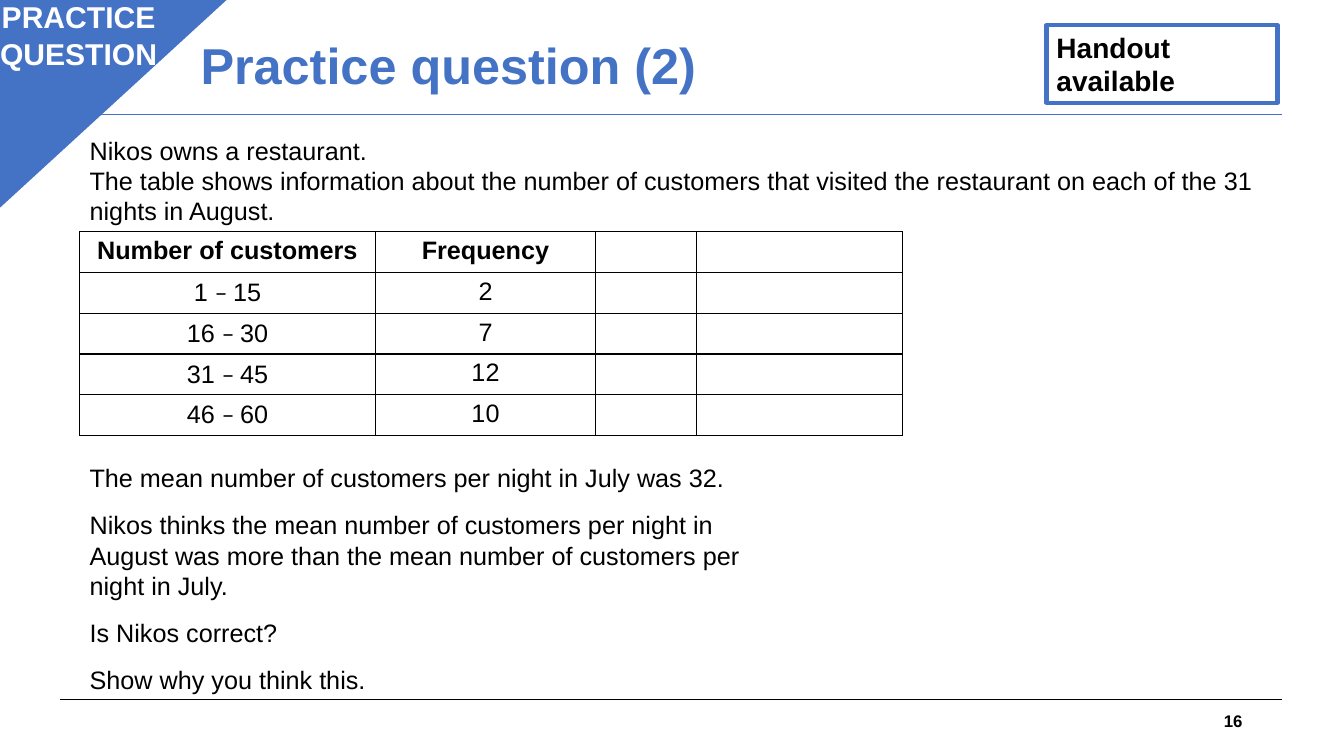
from dataclasses import dataclass

import lxml.etree
import pptx
import pptx.dml.color
import pptx.enum.shapes
import pptx.enum.text
import pptx.oxml.ns
import pptx.util
from pptx.enum.text import MSO_ANCHOR, PP_ALIGN

BLUE = pptx.dml.color.RGBColor(0x44, 0x72, 0xC4)
BLACK = pptx.dml.color.RGBColor(0, 0, 0)
WHITE = pptx.dml.color.RGBColor(0xFF, 0xFF, 0xFF)

WIDTH = pptx.util.Inches(13.33)
HEIGHT = pptx.util.Inches(7.5)
BODY_SIZE = 18


def across(percent: float) -> int:
    return round(WIDTH * percent / 100)


def down(percent: float) -> int:
    return round(HEIGHT * percent / 100)


@dataclass(frozen=True)
class Area:
    """Place on the slide, in percent of its width and height."""
    left: float
    top: float
    width: float
    height: float

    def emu(self) -> tuple[int, int, int, int]:
        return across(self.left), down(self.top), across(self.width), down(self.height)


@dataclass(frozen=True)
class Passage:
    area: Area
    paragraphs: tuple[str, ...]
    size: float = BODY_SIZE
    color: pptx.dml.color.RGBColor = BLACK
    bold: bool = False
    align: PP_ALIGN = PP_ALIGN.LEFT
    anchor: MSO_ANCHOR = MSO_ANCHOR.TOP
    space_before: float = 0
    line_spacing: float = 1.0


@dataclass(frozen=True)
class Rule:
    top: float
    color: pptx.dml.color.RGBColor


RULES = (Rule(92.53, BLACK), Rule(15.2, BLUE))
RULE_LEFT, RULE_RIGHT = 4.43, 95.42

CORNER = Area(-0.23, -0.27, 17.18, 28)
HANDOUT = Passage(Area(77.87, 3.33, 17.18, 10.27), ("Handout\vavailable",),
                  size=20, bold=True, anchor=MSO_ANCHOR.MIDDLE)

PASSAGES = (
    Passage(Area(14.18, 1.6, 64.59, 14.8), ("Practice question (2)",), size=36, color=BLUE,
            bold=True, anchor=MSO_ANCHOR.MIDDLE, line_spacing=0.9),
    Passage(Area(70.67, 92.67, 22.51, 5.33), ("16",), size=12, bold=True,
            align=PP_ALIGN.RIGHT, anchor=MSO_ANCHOR.MIDDLE),
    Passage(Area(-2.1, -0.8, 15.9, 11.2), ("PRACTICE QUESTION",), size=21.5, color=WHITE,
            bold=True, align=PP_ALIGN.CENTER),
    Passage(Area(5.93, 17.2, 91.45, 21.6), (
        "Nikos owns a restaurant.",
        "The table shows information about the number of customers that visited "
        "the restaurant on each of the 31 nights in August.",
    )),
    Passage(Area(5.93, 60.53, 50.56, 32.27), (
        "The mean number of customers per night in July was 32.",
        "Nikos thinks the mean number of customers per night in August was more "
        "than the mean number of customers per night in July.",
        "Is Nikos correct?",
        "Show why you think this.",
    ), space_before=12),
)

FREQUENCY_AREA = Area(5.93, 30.67, 61.22, 26.93)
FREQUENCY_COLUMNS = (21.98, 16.43, 7.5, 15.3)
HEADINGS = ("Number of customers", "Frequency")
FREQUENCIES = (2, 7, 12, 10)
CLASS_WIDTH = 15


def set_font(font, size: float, color: pptx.dml.color.RGBColor, bold: bool) -> None:
    font.name = "Arial"
    font.size = pptx.util.Pt(size)
    font.bold = bold
    font.color.rgb = color


def write_passage(frame, passage: Passage) -> None:
    frame.word_wrap = True
    frame.vertical_anchor = passage.anchor
    for index, text in enumerate(passage.paragraphs):
        paragraph = frame.add_paragraph() if index else frame.paragraphs[0]
        paragraph.text = text
        paragraph.alignment = passage.align
        paragraph.line_spacing = passage.line_spacing
        paragraph.space_before = pptx.util.Pt(passage.space_before if index else 0)
        set_font(paragraph.font, passage.size, passage.color, passage.bold)


def draw_rule(slide, rule: Rule) -> None:
    line = slide.shapes.add_connector(
        pptx.enum.shapes.MSO_CONNECTOR.STRAIGHT,
        across(RULE_LEFT), down(rule.top), across(RULE_RIGHT), down(rule.top))
    line.line.color.rgb = rule.color
    line.line.width = pptx.util.Pt(0.75)
    lxml.etree.SubElement(line._element.spPr, pptx.oxml.ns.qn("a:effectLst"))


def draw_corner(slide) -> None:
    corner = slide.shapes.add_shape(
        pptx.enum.shapes.MSO_SHAPE.ISOSCELES_TRIANGLE, *CORNER.emu())
    corner.adjustments[0] = 0
    corner._element.spPr.xfrm.set("flipV", "1")
    corner.shadow.inherit = False
    corner.fill.solid()
    corner.fill.fore_color.rgb = BLUE
    corner.line.color.rgb = BLUE
    corner.line.width = pptx.util.Pt(1)


def draw_handout(slide) -> None:
    handout = slide.shapes.add_shape(
        pptx.enum.shapes.MSO_SHAPE.RECTANGLE, *HANDOUT.area.emu())
    handout.shadow.inherit = False
    handout.fill.background()
    handout.line.color.rgb = BLUE
    handout.line.width = pptx.util.Pt(3)
    write_passage(handout.text_frame, HANDOUT)


def style_cell(cell) -> None:
    cell.fill.solid()
    cell.fill.fore_color.rgb = WHITE
    properties = cell._tc.get_or_add_tcPr()
    for index, side in enumerate(("lnL", "lnR", "lnT", "lnB")):
        border = lxml.etree.Element(
            pptx.oxml.ns.qn(f"a:{side}"), w=str(pptx.util.Pt(1)))
        fill = lxml.etree.SubElement(border, pptx.oxml.ns.qn("a:solidFill"))
        lxml.etree.SubElement(fill, pptx.oxml.ns.qn("a:srgbClr"), val=str(BLACK))
        properties.insert(index, border)


def draw_frequencies(slide) -> None:
    row_count = len(FREQUENCIES) + 1
    table = slide.shapes.add_table(
        row_count, len(FREQUENCY_COLUMNS), *FREQUENCY_AREA.emu()).table
    table.first_row = table.horz_banding = False
    for column, share in zip(table.columns, FREQUENCY_COLUMNS):
        column.width = across(share)

    classes = [(f"{n * CLASS_WIDTH + 1} ", "– ", f"{(n + 1) * CLASS_WIDTH}")
               for n in range(len(FREQUENCIES))]
    rows = [[(heading,) for heading in HEADINGS]]
    rows += [[bounds, (str(count),)] for bounds, count in zip(classes, FREQUENCIES)]
    for row_index, row in enumerate(rows):
        for column_index in range(len(FREQUENCY_COLUMNS)):
            cell = table.cell(row_index, column_index)
            style_cell(cell)
            paragraph = cell.text_frame.paragraphs[0]
            paragraph.alignment = PP_ALIGN.CENTER
            set_font(paragraph.font, BODY_SIZE, BLACK, row_index == 0)
            for part in row[column_index] if column_index < len(row) else ():
                run = paragraph.add_run()
                run.text = part
                if part == "– ":
                    run.font.name = "Calibri"


def main() -> None:
    deck = pptx.Presentation()
    deck.slide_width, deck.slide_height = WIDTH, HEIGHT
    slide = deck.slides.add_slide(deck.slide_layouts[6])

    # Frame of the slide
    for rule in RULES:
        draw_rule(slide, rule)
    draw_corner(slide)

    # Question
    for passage in PASSAGES:
        box = slide.shapes.add_textbox(*passage.area.emu())
        write_passage(box.text_frame, passage)
    draw_frequencies(slide)
    draw_handout(slide)

    deck.save("out.pptx")


if __name__ == "__main__":
    main()
